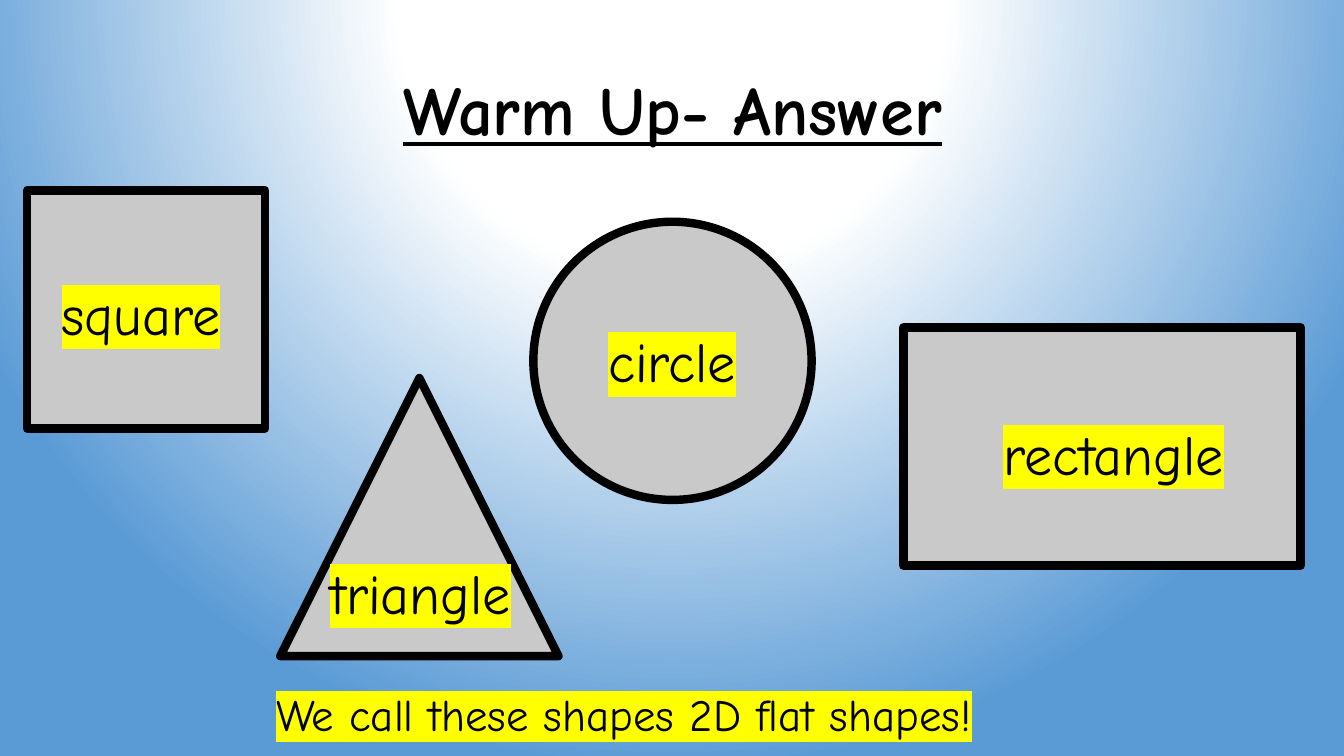
from lxml import etree
from pptx import Presentation
from pptx.dml.color import RGBColor
from pptx.enum import shapes, text
from pptx.oxml import parse_xml
from pptx.oxml.ns import nsdecls, qn
from pptx.util import Inches, Pt

BLACK = RGBColor(0x00, 0x00, 0x00)
GREY = RGBColor(0xC9, 0xC9, 0xC9)
YELLOW = RGBColor(0xFF, 0xFF, 0x00)
WHITE = RGBColor(0xFF, 0xFF, 0xFF)
SKY = RGBColor(0x5B, 0x9B, 0xD5)
FONT = "Comic Neue"

SHAPE = shapes.MSO_SHAPE
# kind, shape box, label, label box
FIGURES = [
    (SHAPE.RECTANGLE, (0.27, 1.89, 2.36, 2.36), "square", (0.44, 2.72, 1.92, 0.77)),
    (SHAPE.RECTANGLE, (8.96, 3.25, 3.94, 2.36), "rectangle", (9.71, 4.11, 2.67, 0.77)),
    (SHAPE.OVAL, (5.29, 2.2, 2.76, 2.76), "circle", (5.83, 3.19, 1.67, 0.77)),
    (SHAPE.ISOSCELES_TRIANGLE, (2.78, 3.75, 2.76, 2.76), "triangle", (3.05, 5.49, 2.24, 0.77)),
]


def set_background(s):
    """Fill the slide with a circular gradient centred above its top edge."""
    stops = "".join(
        f'<a:gs pos="{pos * 1000}"><a:srgbClr val="{color}"/></a:gs>'
        for pos, color in ((0, WHITE), (35, WHITE), (100, SKY)))
    bg = parse_xml(
        f'<p:bg {nsdecls("p", "a")}><p:bgPr><a:gradFill rotWithShape="1">'
        f'<a:gsLst>{stops}</a:gsLst><a:path path="circle">'
        '<a:fillToRect l="50000" t="-80000" r="50000" b="180000"/></a:path>'
        '</a:gradFill><a:effectLst/></p:bgPr></p:bg>')
    s.element.cSld.insert(0, bg)


def highlight(r, color):
    fill = r.font.fill._xPr.find(qn("a:solidFill"))
    mark = etree.Element(qn("a:highlight"))
    etree.SubElement(mark, qn("a:srgbClr"), val=str(color))
    fill.addnext(mark)


def add_text(s, box, content, size, align=text.PP_ALIGN.CENTER, bold=None,
             underline=None, mark=None, wrap=False, spacing=None,
             anchor=text.MSO_ANCHOR.TOP):
    tf = s.shapes.add_textbox(*map(Inches, box)).text_frame
    tf.word_wrap = wrap
    tf.auto_size = text.MSO_AUTO_SIZE.NONE if wrap else text.MSO_AUTO_SIZE.SHAPE_TO_FIT_TEXT
    tf.vertical_anchor = anchor
    p = tf.paragraphs[0]
    p.alignment = align
    p.line_spacing = spacing
    r = p.add_run()
    r.text = content
    r.font.name = FONT
    r.font.size = Pt(size)
    r.font.bold = bold
    r.font.underline = underline
    r.font.color.rgb = BLACK
    if mark is not None:
        highlight(r, mark)


def add_figure(s, kind, box):
    sp = s.shapes.add_shape(kind, *map(Inches, box))
    sp.shadow.inherit = False
    sp.fill.solid()
    sp.fill.fore_color.rgb = GREY
    sp.line.color.rgb = BLACK
    sp.line.width = Pt(6)


def main():
    prs = Presentation()
    prs.slide_width, prs.slide_height = Inches(13.33), Inches(7.5)
    s = prs.slides.add_slide(prs.slide_layouts[6])
    set_background(s)
    add_text(s, (0.92, 0.4, 11.5, 1.45), "Warm Up- Answer", 49, bold=True,
             underline=True, wrap=True, spacing=0.9, anchor=text.MSO_ANCHOR.MIDDLE)
    add_text(s, (2.64, 6.76, 7.93, 0.64), "We call these shapes 2D flat shapes!", 32,
             align=text.PP_ALIGN.LEFT, mark=YELLOW)
    for kind, box, _, _ in FIGURES:
        add_figure(s, kind, box)
    for _, _, label, box in FIGURES:
        add_text(s, box, label, 40, mark=YELLOW)
    prs.save("out.pptx")


if __name__ == "__main__":
    main()
